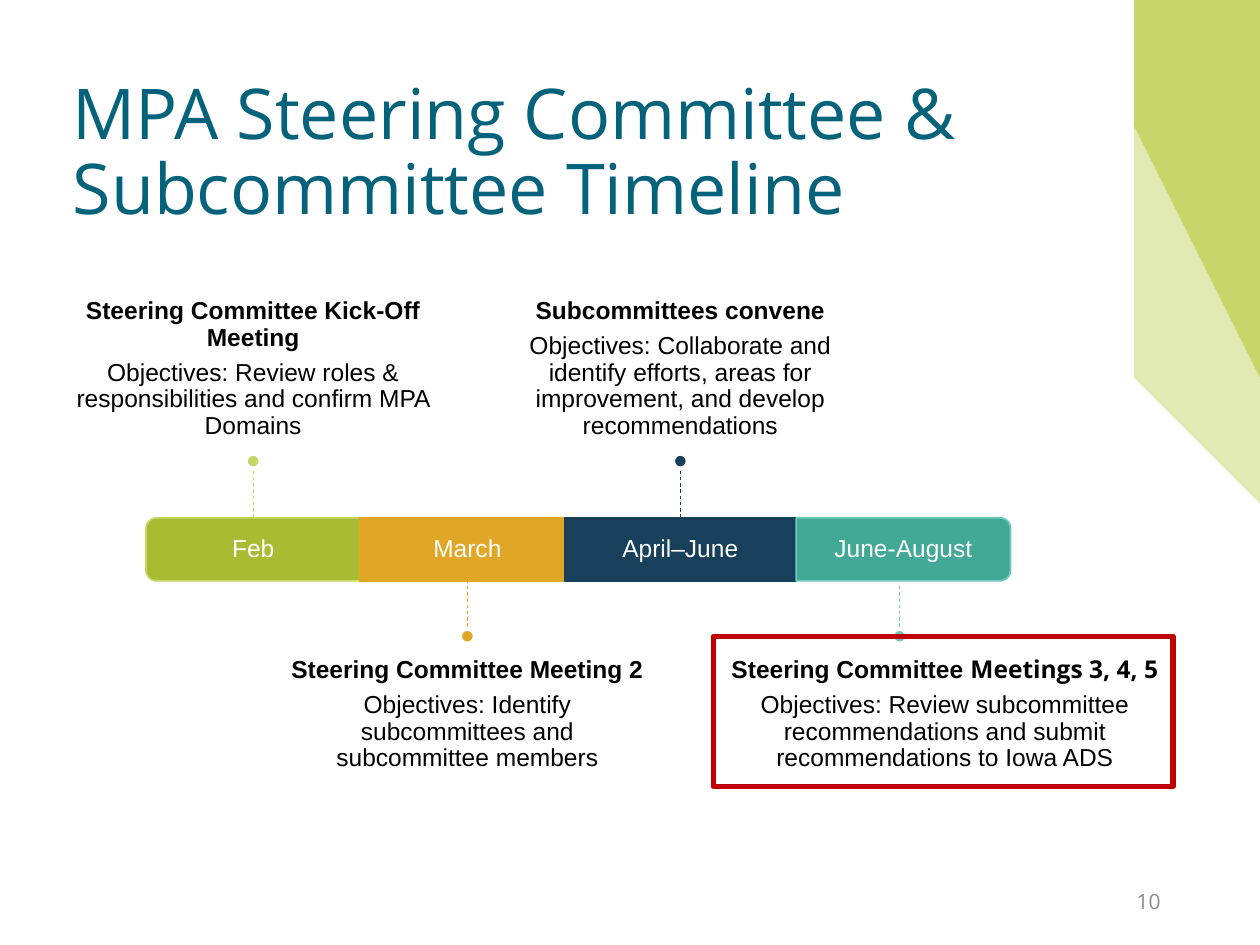
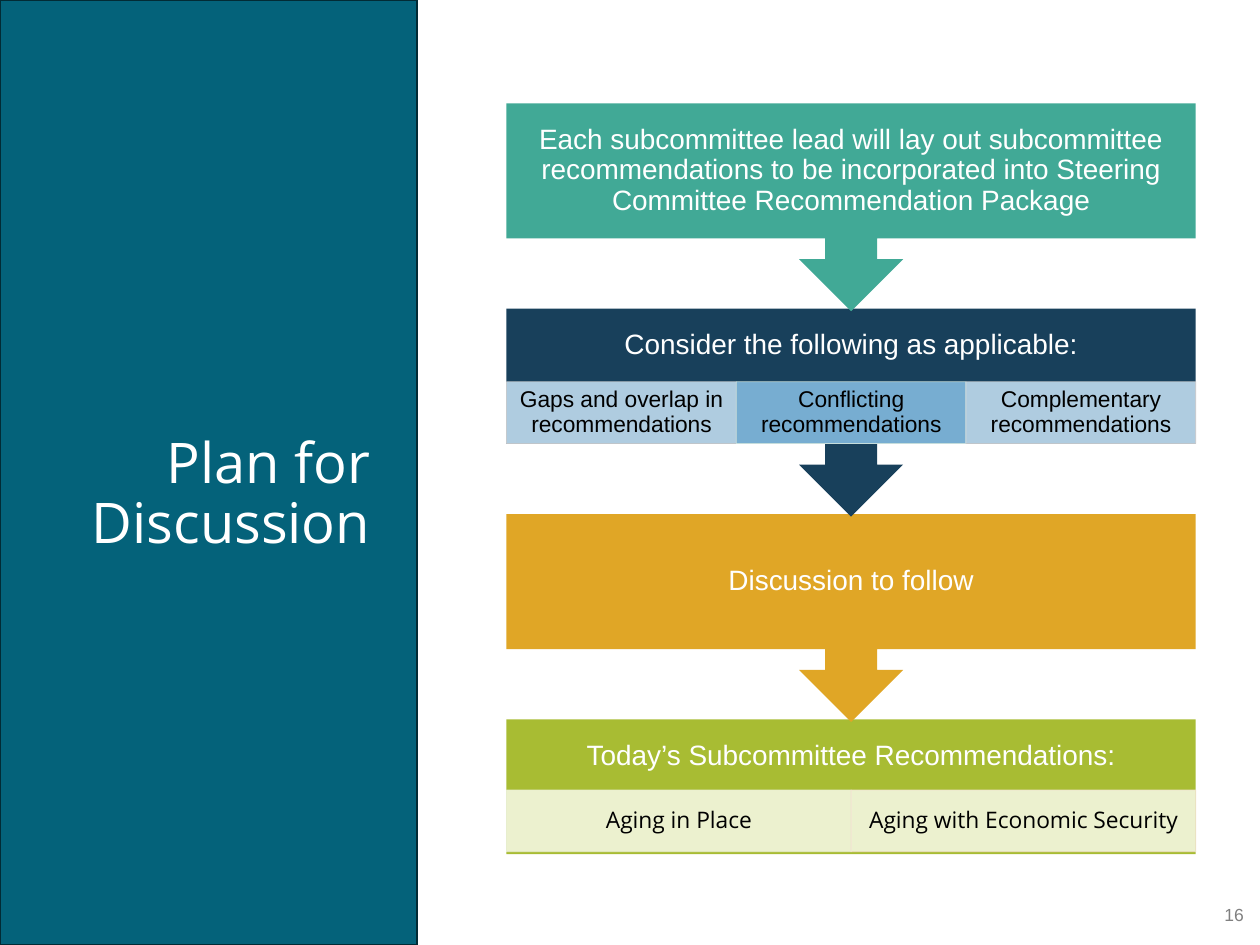
from lxml import etree
from pptx import Presentation
from pptx.dml.color import RGBColor
from pptx.enum.dml import MSO_LINE
from pptx.enum.shapes import MSO_CONNECTOR, MSO_SHAPE
from pptx.enum.text import MSO_ANCHOR, PP_ALIGN
from pptx.oxml.ns import qn
from pptx.util import Inches, Pt

COLORS = {
    "white": "FFFFFF", "black": "000000", "teal": "04627A", "teal_dark": "022B35",
    "lime": "C6D668", "lime_pale": "E2EAB3", "green": "A8BC33", "gold": "E0A626",
    "navy": "18405B", "sea": "41A996", "sea_light": "70C8B8", "red": "C00000",
    "gray": "8C8C8C", "gray_dark": "808080", "cell_green": "F4F7E1",
    "cell_blue": "C0DCEF", "cell_mid": "82B9DE", "edge_green": "EAF0D4",
    "edge_sand": "F3E1CD", "edge_gray": "CCCFD2", "edge_mint": "D5EBE6",
}
BODY, HEAD = "Arial", "Open Sans"
TITLE = {"name": HEAD, "size": 40, "color": "teal"}
PANEL_TITLE = {"name": HEAD, "size": 32, "color": "white"}
BAR = {"name": BODY, "size": 14, "color": "white"}
NOTE = {"name": BODY, "size": 14, "color": "black"}
NOTE_HEAD = {**NOTE, "bold": True}
STEP = {"name": BODY, "size": 16, "color": "white"}
CELL = {"name": BODY, "size": 13, "color": "black"}
CENTER, LEFT, RIGHT = PP_ALIGN.CENTER, PP_ALIGN.LEFT, PP_ALIGN.RIGHT
TOP, MIDDLE, BOTTOM = MSO_ANCHOR.TOP, MSO_ANCHOR.MIDDLE, MSO_ANCHOR.BOTTOM
TEXT_INSET = (0.1, 0.05, 0.1, 0.05)
BOX_INSET = (0.12, 0.12, 0.12, 0.12)


def rgb(name):
    return RGBColor.from_string(COLORS[name])


def style_font(font, fmt):
    values = {**fmt, "size": Pt(fmt["size"])}
    font.color.rgb = rgb(values.pop("color"))
    for key, value in values.items():
        setattr(font, key, value)


def write(sp, paragraphs, align=CENTER, anchor=MIDDLE, inset=BOX_INSET, spacing=0.9):
    tf = sp.text_frame
    frame = {"word_wrap": True, "vertical_anchor": anchor}
    sides = ("margin_left", "margin_top", "margin_right", "margin_bottom")
    frame.update(zip(sides, map(Inches, inset)))
    for key, value in frame.items():
        setattr(tf, key, value)
    for i, runs in enumerate(paragraphs):
        p = tf.add_paragraph() if i else tf.paragraphs[0]
        p.alignment, p.line_spacing = align, spacing
        p.space_after = Pt(0.35 * runs[0][1]["size"])
        for text, fmt in runs:
            r = p.add_run()
            r.text = text
            style_font(r.font, fmt)


def add_text(s, box, paragraphs, **layout):
    sp = s.shapes.add_textbox(*map(Inches, box))
    write(sp, paragraphs, **layout)
    return sp


def set_alpha(sp, percent):
    for color in sp._element.spPr.iter(qn("a:srgbClr")):
        etree.SubElement(color, qn("a:alpha"), val=str(percent * 1000))


def paint(sp, fill=None, line=None, width=1):
    sp.shadow.inherit = False
    if fill:
        sp.fill.solid()
        sp.fill.fore_color.rgb = rgb(fill)
    else:
        sp.fill.background()
    if line:
        sp.line.color.rgb = rgb(line)
        sp.line.width = Pt(width)
    else:
        sp.line.fill.background()


def add_box(s, kind, box, fill=None, line=None, width=1):
    sp = s.shapes.add_shape(kind, *map(Inches, box))
    paint(sp, fill, line, width)
    return sp


def add_dashed_line(s, x, top, bottom, color):
    c = s.shapes.add_connector(MSO_CONNECTOR.STRAIGHT, *map(Inches, (x, top, x, bottom)))
    c.line.color.rgb = rgb(color)
    c.line.width = Pt(0.5)
    c.line.dash_style = MSO_LINE.DASH
    etree.SubElement(c._element.spPr, qn("a:effectLst"))


def add_page_number(s, box, number, fmt):
    add_text(s, box, [[(number, fmt)]], align=RIGHT, inset=TEXT_INSET, spacing=1.0)


def bezier(a, b, c, d, steps=12):
    for i in range(1, steps + 1):
        t = i / steps
        u = 1 - t
        yield tuple(u**3 * p + 3 * u * u * t * q + 3 * u * t * t * v + t**3 * w
                    for p, q, v, w in zip(a, b, c, d))


def add_wave_background(s):
    s.background.fill.solid()
    s.background.fill.fore_color.rgb = rgb("lime")
    edge = [(8.91, 0), (9.21, 0.86), (9.39, 2.56), (9.65, 4.11)]
    edge += bezier((9.65, 4.11), (9.63, 4.45), (9.72, 6.13), (9.69, 6.41))
    edge += [(9.56, 7.5)]
    middle = 3.76
    for color, sx, sy in (("lime_pale", 1.024, 1.04), ("white", 1, 1)):
        points = [(x * sx, min(7.5, max(0, middle + (y - middle) * sy))) for x, y in edge]
        fb = s.shapes.build_freeform(0, 0, scale=Inches(1))
        fb.add_line_segments(points + [(0, 7.5)], close=True)
        paint(fb.convert_to_shape(), color)


def add_bar(s, box, label, fill, line, turn):
    x, y, w, h = box
    if turn:
        rotated = (x + (w - h) / 2, y + (h - w) / 2, h, w)
        add_box(s, MSO_SHAPE.ROUND_2_SAME_RECTANGLE, rotated, fill, line).rotation = turn
        add_text(s, box, [[(label, BAR)]])
    else:
        write(add_box(s, MSO_SHAPE.RECTANGLE, box, fill, line), [[(label, BAR)]])


def add_milestone(s, x, bar_edge, above, color, heading, objectives, text_x, text_w, gap=0):
    side = -1 if above else 1
    dot, reach, text_h = 0.1, 0.4, 1.74
    tip = bar_edge + side * reach
    add_dashed_line(s, x, bar_edge + side * gap, tip, color)
    dot_top = tip - dot if above else tip
    add_box(s, MSO_SHAPE.OVAL, (x - dot / 2, dot_top, dot, dot), color, "white")
    text_top = dot_top - text_h if above else dot_top + dot
    add_text(s, (text_x - text_w / 2, text_top, text_w, text_h),
             [heading, [(objectives, NOTE)]], anchor=BOTTOM if above else TOP,
             inset=(0, 0, 0, 0.12) if above else (0, 0.12, 0, 0))


def build_timeline(s):
    add_wave_background(s)
    add_text(s, (0.48, 0.5, 8.62, 1.45),
             [[("MPA Steering Committee & Subcommittee Timeline", TITLE)]],
             align=LEFT, inset=TEXT_INSET)
    add_page_number(s, (7.06, 6.95, 2.25, 0.4), "10",
                    {"name": HEAD, "size": 12, "color": "gray"})
    top, height = 4.11, 0.5
    bars = [
        (1.16, 1.7, "Feb", "green", "lime", 270),
        (2.86, 1.7, "March", "gold", "gold", 0),
        (4.48, 1.84, "April–June", "navy", "navy", 0),
        (6.32, 1.7, "June-August", "sea", "sea_light", 90),
    ]
    for x, w, *look in bars:
        add_bar(s, (x, top, w, height), *look)
    milestones = [
        (2.01, True, "lime", [("Steering Committee Kick-Off Meeting", NOTE_HEAD)],
         "Objectives: Review roles & responsibilities and confirm MPA Domains", 2.01, 2.83),
        (3.71, False, "gold", [("Steering Committee Meeting 2", NOTE_HEAD)],
         "Objectives: Identify subcommittees and subcommittee members", 3.71, 2.83),
        (5.4, True, "navy", [("Subcommittees convene", NOTE_HEAD)],
         "Objectives: Collaborate and identify efforts, areas for improvement, "
         "and develop recommendations", 5.4, 2.83),
        (7.14, False, "sea_light", [("Steering Committee ", NOTE_HEAD),
                                    ("Meetings 3, 4, 5", {**NOTE_HEAD, "name": HEAD})],
         "Objectives: Review subcommittee recommendations and submit "
         "recommendations to Iowa ADS", 7.5, 3.63, 0.05),
    ]
    for x, above, *rest in milestones:
        add_milestone(s, x, top if above else top + height - 0.01, above, *rest)
    add_box(s, MSO_SHAPE.RECTANGLE, (5.66, 5.05, 3.65, 1.19), None, "red", 3)


def add_title_panel(s, box, title):
    x, y, w, h = box
    add_box(s, MSO_SHAPE.RECTANGLE, box, "teal", "teal_dark")
    add_text(s, (x + 0.48, y + 1.84, w - 0.75, 2.62), [[(title, PANEL_TITLE)]],
             align=RIGHT, anchor=BOTTOM, inset=TEXT_INSET)


def add_step(s, box, body_h, kind, text, fill, cells):
    x, y, w, h = box
    head_h, cell_h = 0.58, 0.49
    bottom = 0.12 + (body_h - head_h if cells else 0)
    write(add_box(s, kind, box, fill), [[(text, STEP)]], inset=(0.12, 0.12, 0.12, bottom))
    for i, (label, font, cell_fill, edge) in enumerate(cells):
        cell_w = w / len(cells)
        cell_top = y + body_h - cell_h - (0.02 if kind == MSO_SHAPE.RECTANGLE else 0)
        sp = add_box(s, MSO_SHAPE.RECTANGLE, (x + i * cell_w, cell_top, cell_w, cell_h),
                     cell_fill, edge, 0.5)
        set_alpha(sp, 90)
        write(sp, [[(label, {**CELL, "name": font})]], inset=(0.1, 0.02, 0.1, 0.02))


def build_discussion(s):
    add_title_panel(s, (0, 0, 3.31, 7.5), "Plan for Discussion")
    add_page_number(s, (9.6, 7.06, 0.37, 0.4), "16",
                    {"name": BODY, "size": 10, "color": "gray_dark"})
    steps = [
        ("Each subcommittee lead will lay out subcommittee recommendations to be "
         "incorporated into Steering Committee Recommendation Package", "sea", []),
        ("Consider the following as applicable:", "navy", [
            ("Gaps and overlap in recommendations", BODY, "cell_blue", "edge_gray"),
            ("Conflicting recommendations", BODY, "cell_mid", "edge_mint"),
            ("Complementary recommendations", BODY, "cell_blue", "edge_gray")]),
        ("Discussion to follow", "gold", []),
        ("Today’s Subcommittee Recommendations:", "green", [
            ("Aging in Place", HEAD, "cell_green", "edge_green"),
            ("Aging with Economic Security", HEAD, "cell_green", "edge_sand")]),
    ]
    body_h, step_h, pitch = 1.07, 1.65, 1.63
    for i in reversed(range(len(steps))):
        last = i == len(steps) - 1
        kind = MSO_SHAPE.RECTANGLE if last else MSO_SHAPE.DOWN_ARROW_CALLOUT
        box = (4.02, 0.82 + i * pitch, 5.47, body_h if last else step_h)
        add_step(s, box, body_h, kind, *steps[i])


def main():
    prs = Presentation()
    prs.slide_width, prs.slide_height = Inches(10), Inches(7.5)
    for build in (build_timeline, build_discussion):
        build(prs.slides.add_slide(prs.slide_layouts[6]))
    prs.save("out.pptx")


if __name__ == "__main__":
    main()
